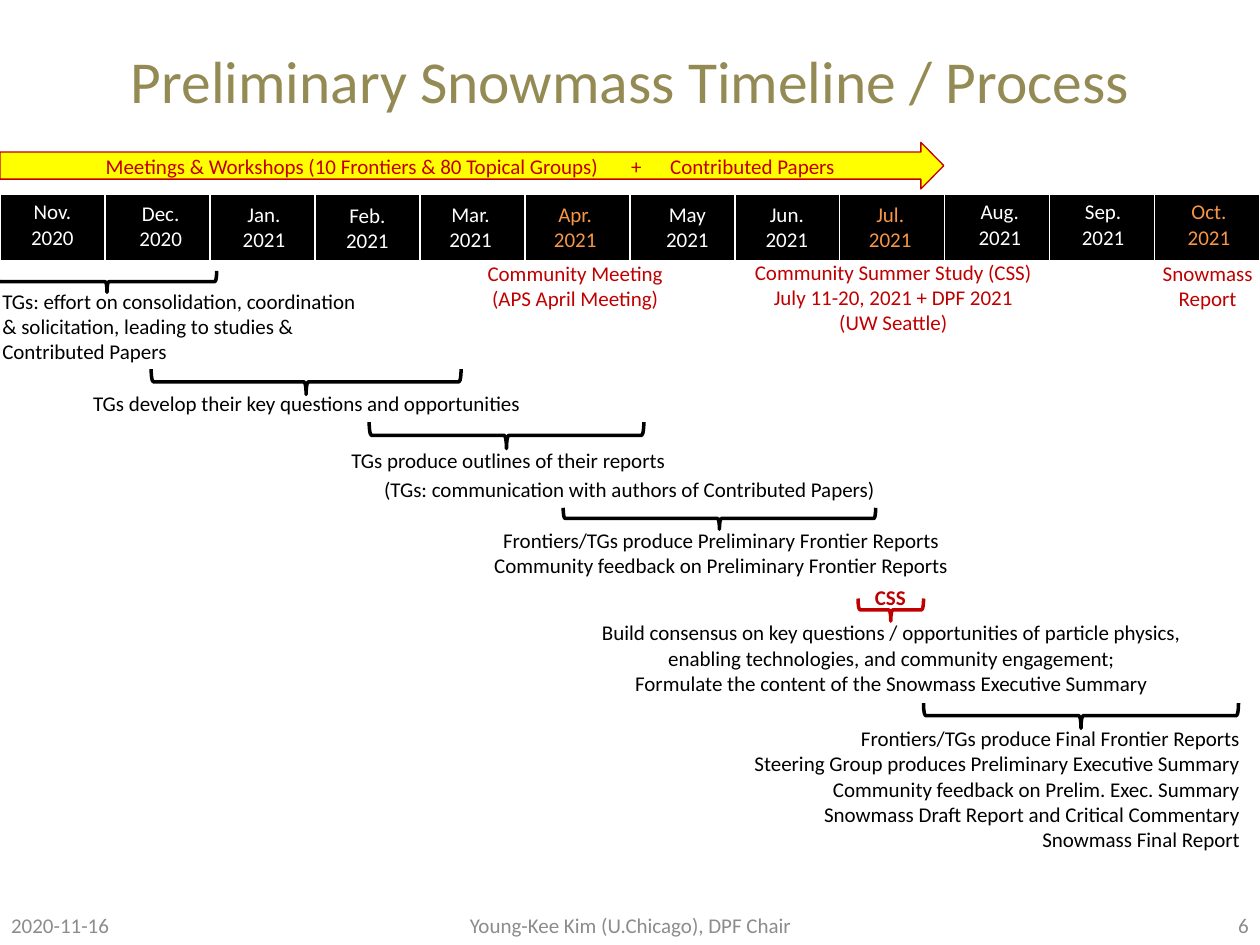
from dataclasses import dataclass

from lxml.etree import SubElement
from pptx import Presentation
from pptx.dml.color import RGBColor
from pptx.enum.shapes import MSO_SHAPE as Shape
from pptx.enum.text import MSO_ANCHOR as Anchor, MSO_AUTO_SIZE as AutoSize, PP_ALIGN as Align
from pptx.oxml import parse_xml
from pptx.oxml.ns import nsdecls, qn
from pptx.util import Inches, Pt


@dataclass(frozen=True)
class Theme:
    """Colours, font and type sizes of the deck."""
    font: str = "Calibri"
    title_size: int = 34
    body_size: int = 12
    title: str = "948A54"
    black: str = "000000"
    white: str = "FFFFFF"
    red: str = "C00000"
    orange: str = "F79646"
    yellow: str = "FFFF00"
    grey: str = "8C8C8C"


THEME = Theme()

MONTHS = [
    ("Nov.", 2020, 0.14, 1.53), ("Dec.", 2020, 1.00, 1.54), ("Jan.", 2021, 1.82, 1.55),
    ("Feb.", 2021, 2.64, 1.56), ("Mar.", 2021, 3.46, 1.55), ("Apr.", 2021, 4.29, 1.55),
    ("May", 2021, 5.18, 1.55), ("Jun.", 2021, 5.97, 1.55), ("Jul.", 2021, 6.79, 1.55),
    ("Aug.", 2021, 7.66, 1.53), ("Sep.", 2021, 8.48, 1.53), ("Oct.", 2021, 9.32, 1.53),
]
KEY_MONTHS = {"Apr.", "Jul.", "Oct."}

EVENTS = [
    ((3.74, 2.02, 1.65, 0.5), "Community Meeting\n(APS April Meeting)", False),
    ((5.89, 2.01, 2.4, 0.71),
     "Community Summer Study (CSS)\nJuly 11-20, 2021 + DPF 2021 (UW Seattle)", True),
    ((9.12, 2.02, 0.93, 0.5), "Snowmass\nReport", False),
]

STEPS = [
    ((-0.08, 2.24, 3.13, 0.71), Align.LEFT, True,
     "TGs: effort on consolidation, coordination & solicitation, "
     "leading to studies & Contributed Papers"),
    ((0.64, 3.05, 3.67, 0.3), Align.LEFT, False,
     "TGs develop their key questions and opportunities"),
    ((3.46, 4.14, 4.53, 0.5), Align.CENTER, True,
     "Frontiers/TGs produce Preliminary Frontier Reports\n"
     "Community feedback on Preliminary Frontier Reports"),
    ((4.35, 4.87, 5.45, 0.71), Align.CENTER, True,
     "Build consensus on key questions / opportunities of particle physics,\n"
     "enabling technologies, and community engagement;\n"
     "Formulate the content of the Snowmass Executive Summary"),
    ((5.85, 5.71, 4.09, 1.11), Align.RIGHT, False,
     "Frontiers/TGs produce Final Frontier Reports\n"
     "Steering Group produces Preliminary Executive Summary\n"
     "Community feedback on Prelim. Exec. Summary\n"
     "Snowmass Draft Report and Critical Commentary\n"
     "Snowmass Final Report"),
]

BRACES = [
    (-0.02, 2.15, 1.74, 0.17, THEME.black),
    (1.2, 2.93, 2.46, 0.2, THEME.black),
    (2.93, 3.35, 2.18, 0.21, THEME.black),
    (4.47, 4.03, 2.48, 0.17, THEME.black),
    (6.81, 4.75, 0.52, 0.18, THEME.red),
    (7.33, 5.58, 2.5, 0.2, THEME.black),
]

FOOTERS = [
    ((-0.01, 7.14, 2.33, 0.4), "2020-11-16", Align.LEFT),
    ((3.42, 7.14, 3.17, 0.4), "Young-Kee Kim (U.Chicago), DPF Chair", Align.CENTER),
    ((7.68, 7.14, 2.33, 0.4), "6", Align.RIGHT),
]


def inches(place):
    """Turn a tuple of numbers into lengths."""
    return [Inches(value) for value in place]


def write_text(frame, text, *, size=THEME.body_size, color=THEME.black, bold=False,
               align=Align.CENTER, tabs=()):
    """Fill a text frame, one paragraph per line."""
    for index, line in enumerate(text.split("\n")):
        para = frame.paragraphs[0] if index == 0 else frame.add_paragraph()
        para.alignment = align
        if tabs:
            stops = SubElement(para._p.get_or_add_pPr(), qn("a:tabLst"))
            for stop in tabs:
                SubElement(stops, qn("a:tab"), pos=str(Inches(stop)), algn="l")
        span = para.add_run()
        span.text = line
        span.font.name = THEME.font
        span.font.size = Pt(size)
        span.font.bold = bold
        span.font.color.rgb = RGBColor.from_string(color)


def add_text(page, place, text, *, wrap=False, anchor=Anchor.TOP, **style):
    """Add a text box and return its frame."""
    frame = page.shapes.add_textbox(*inches(place)).text_frame
    frame.word_wrap = wrap
    frame.vertical_anchor = anchor
    frame.auto_size = AutoSize.SHAPE_TO_FIT_TEXT if anchor == Anchor.TOP else AutoSize.NONE
    write_text(frame, text, **style)
    return frame


def add_outlined(page, kind, place, color, weight, fill=None):
    """Add a preset shape with a line and an optional fill."""
    shape = page.shapes.add_shape(kind, *inches(place))
    shape.shadow.inherit = False
    shape.line.color.rgb = RGBColor.from_string(color)
    shape.line.width = Pt(weight)
    if fill:
        shape.fill.solid()
        shape.fill.fore_color.rgb = RGBColor.from_string(fill)
    else:
        shape.fill.background()
    return shape


def add_brace(page, left, top, span, depth, color):
    """Add a brace that lies over a span and points down."""
    place = (left + (span - depth) / 2, top + (depth - span) / 2, depth, span)
    add_outlined(page, Shape.LEFT_BRACE, place, color, 2).rotation = 270


def add_month_band(page):
    """Add the black table band and its month labels."""
    graphic = page.shapes.add_table(1, len(MONTHS), *inches((0, 1.54, 10, 0.54)))
    for column in graphic.table.columns:
        column.width = Inches(10 / len(MONTHS))
    for cell in graphic.table.iter_cells():
        cell.fill.solid()
        cell.fill.fore_color.rgb = RGBColor.from_string(THEME.black)
        properties = cell._tc.get_or_add_tcPr()
        for index, (side, weight) in enumerate(zip("LRTB", (1, 1, 1, 3))):
            properties.insert(index, parse_xml(
                f'<a:ln{side} {nsdecls("a")} w="{Pt(weight)}"><a:solidFill>'
                f'<a:srgbClr val="{THEME.white}"/></a:solidFill></a:ln{side}>'))
    for month, year, left, top in MONTHS:
        color = THEME.orange if month in KEY_MONTHS else THEME.white
        add_text(page, (left, top, 0.55, 0.5), f"{month}\n{year}", color=color)


def add_meetings_arrow(page):
    """Add the arrow for meetings and papers above the months."""
    arrow = add_outlined(page, Shape.RIGHT_ARROW, (0, 1.13, 7.49, 0.37),
                         THEME.red, 0.75, THEME.yellow)
    arrow.adjustments[0], arrow.adjustments[1] = 0.58, 0.49
    add_text(page, (0.74, 1.17, 6.02, 0.3),
             "Meetings & Workshops (10 Frontiers & 80 Topical Groups)\t+\tContributed Papers",
             wrap=True, color=THEME.red, align=Align.LEFT, tabs=(4.17, 4.48))


def add_outline_step(page):
    """Add the outlines step with its indented remark."""
    frame = add_text(page, (2.69, 3.5, 4.58, 0.54),
                     "TGs produce outlines of their reports\n"
                     "(TGs: communication with authors of Contributed Papers)",
                     align=Align.LEFT)
    remark = frame.paragraphs[1]
    remark.space_before = Pt(2.4)
    remark._p.get_or_add_pPr().set("marL", str(Inches(0.26)))


def add_title(page, text):
    """Place and format the title."""
    title = page.shapes.title
    title.left, title.top, title.width, title.height = inches((0, 0.18, 10, 0.91))
    title.text_frame.vertical_anchor = Anchor.MIDDLE
    write_text(title.text_frame, text, size=THEME.title_size, color=THEME.title)


def main():
    """Build the timeline slide and save it."""
    deck = Presentation()
    deck.slide_width, deck.slide_height = inches((10, 7.5))
    page = deck.slides.add_slide(deck.slide_layouts[5])
    add_title(page, "Preliminary Snowmass Timeline / Process")
    add_month_band(page)
    add_meetings_arrow(page)
    for place, text, wrap in EVENTS:
        add_text(page, place, text, wrap=wrap, color=THEME.red)
    for place, align, wrap, text in STEPS:
        add_text(page, place, text, wrap=wrap, align=align)
    add_outline_step(page)
    for brace in BRACES:
        add_brace(page, *brace)
    add_text(page, (6.84, 4.59, 0.45, 0.3), "CSS", color=THEME.red, bold=True)
    for place, text, align in FOOTERS:
        add_text(page, place, text, wrap=True, anchor=Anchor.MIDDLE,
                 color=THEME.grey, align=align)
    deck.save("out.pptx")


if __name__ == "__main__":
    main()
